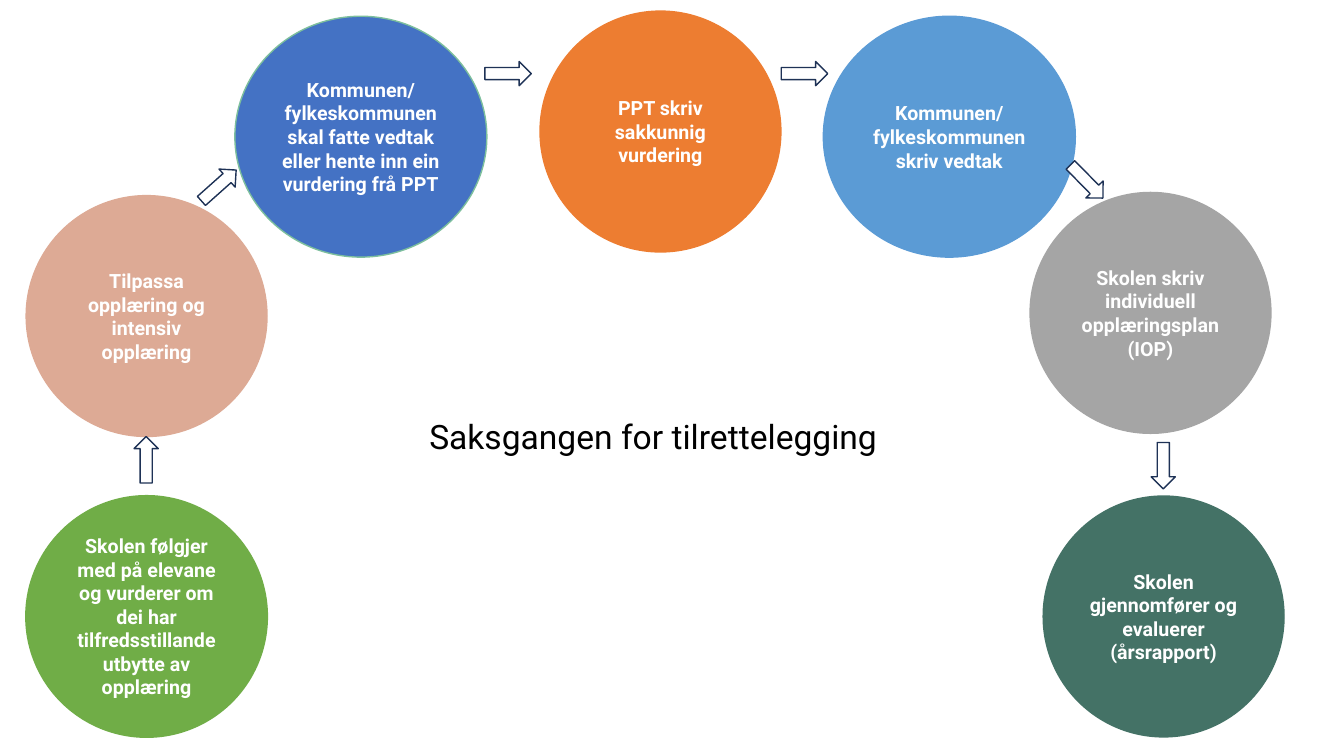
from pptx import Presentation
from pptx import util as u
from pptx.dml.color import RGBColor
from pptx.enum import shapes, text

WHITE = RGBColor(0xFF, 0xFF, 0xFF)
BLACK = RGBColor(0x00, 0x00, 0x00)
NAVY = RGBColor(0x1E, 0x32, 0x56)
GREEN = RGBColor(0x70, 0xAD, 0x47)
SALMON = RGBColor(0xDD, 0xAA, 0x95)
BLUE = RGBColor(0x44, 0x72, 0xC4)
MINT = RGBColor(0x7D, 0xBF, 0x9D)
ORANGE = RGBColor(0xED, 0x7D, 0x31)
SKY = RGBColor(0x5B, 0x9B, 0xD5)
GREY = RGBColor(0xA5, 0xA5, 0xA5)
TEAL = RGBColor(0x44, 0x72, 0x66)

FONT = "Roboto"
CIRCLE, WIDE = 6.07, 6.35
ARROW_W, ARROW_H = 1.17, 0.61

STEPS = [
    (0.66, 12.5, CIRCLE, GREEN, GREEN, 1.5,
     "Skolen følgjer med på elevane og vurderer om dei har tilfredsstillande utbytte av opplæring"),
    (0.66, 4.93, CIRCLE, SALMON, SALMON, 1, "Tilpassa opplæring og intensiv opplæring"),
    (5.92, 0.41, WIDE, BLUE, MINT, 1,
     "Kommunen/ fylkeskommunen skal fatte vedtak eller hente inn ein vurdering frå PPT"),
    (13.61, 0.28, CIRCLE, ORANGE, ORANGE, 1, "PPT skriv sakkunnig vurdering"),
    (20.75, 0.41, WIDE, SKY, SKY, 1, "Kommunen/ fylkeskommunen skriv vedtak"),
    (25.96, 4.85, CIRCLE, GREY, GREY, 1, "Skolen skriv individuell opplæringsplan (IOP)"),
    (26.29, 12.5, CIRCLE, TEAL, TEAL, 1, "Skolen gjennomfører og evaluerer (årsrapport)"),
]
ARROWS = [
    (3.1, 11.28, 270),
    (4.93, 4.37, 318.3),
    (12.22, 1.55, 0),
    (19.69, 1.55, 0),
    (26.8, 4.27, 45.5),
    (28.73, 11.43, 90),
]


def write(tf, words, size=14, color=WHITE, bold=False, align=None, anchor=text.MSO_ANCHOR.TOP):
    """Put formatted words in a text frame."""
    tf.word_wrap = True
    tf.vertical_anchor = anchor
    p = tf.paragraphs[0]
    p.alignment = align
    r = p.add_run()
    r.text = words
    r.font.name, r.font.size, r.font.bold = FONT, u.Pt(size), bold
    r.font.color.rgb = color


def add_outlined(s, kind, box, fill, line, weight=1):
    """Add a flat filled shape in a box given in centimetres."""
    sp = s.shapes.add_shape(kind, *map(u.Cm, box))
    sp.shadow.inherit = False
    sp.fill.solid()
    sp.fill.fore_color.rgb = fill
    sp.line.color.rgb = line
    sp.line.width = u.Pt(weight)
    return sp


def add_step(s, box, fill, line, weight, words):
    """Add one circle of the process with its centred label."""
    sp = add_outlined(s, shapes.MSO_SHAPE.FLOWCHART_CONNECTOR, box, fill, line, weight)
    write(sp.text_frame, words, bold=True, align=text.PP_ALIGN.CENTER,
          anchor=text.MSO_ANCHOR.MIDDLE)


def add_arrow(s, box, angle):
    """Add one block arrow turned towards the next step."""
    sp = add_outlined(s, shapes.MSO_SHAPE.RIGHT_ARROW, box, WHITE, NAVY)
    sp.rotation = angle


def add_title(s, box, words):
    """Add the title in the middle of the arc."""
    tf = s.shapes.add_textbox(*map(u.Cm, box)).text_frame
    write(tf, words, size=24, color=BLACK)
    tf.auto_size = text.MSO_AUTO_SIZE.SHAPE_TO_FIT_TEXT


def main():
    """Build the slide and save it."""
    prs = Presentation()
    prs.slide_width, prs.slide_height = u.Cm(33.87), u.Cm(19.05)
    s = prs.slides.add_slide(prs.slide_layouts[6])
    for x, y, width, fill, line, weight, words in STEPS:
        add_step(s, (x, y, width, CIRCLE), fill, line, weight, words)
    for x, y, angle in ARROWS:
        add_arrow(s, (x, y, ARROW_W, ARROW_H), angle)
    add_title(s, (10.57, 10.36, 12.17, 1.27), "Saksgangen for tilrettelegging")
    prs.save("out.pptx")


if __name__ == "__main__":
    main()
